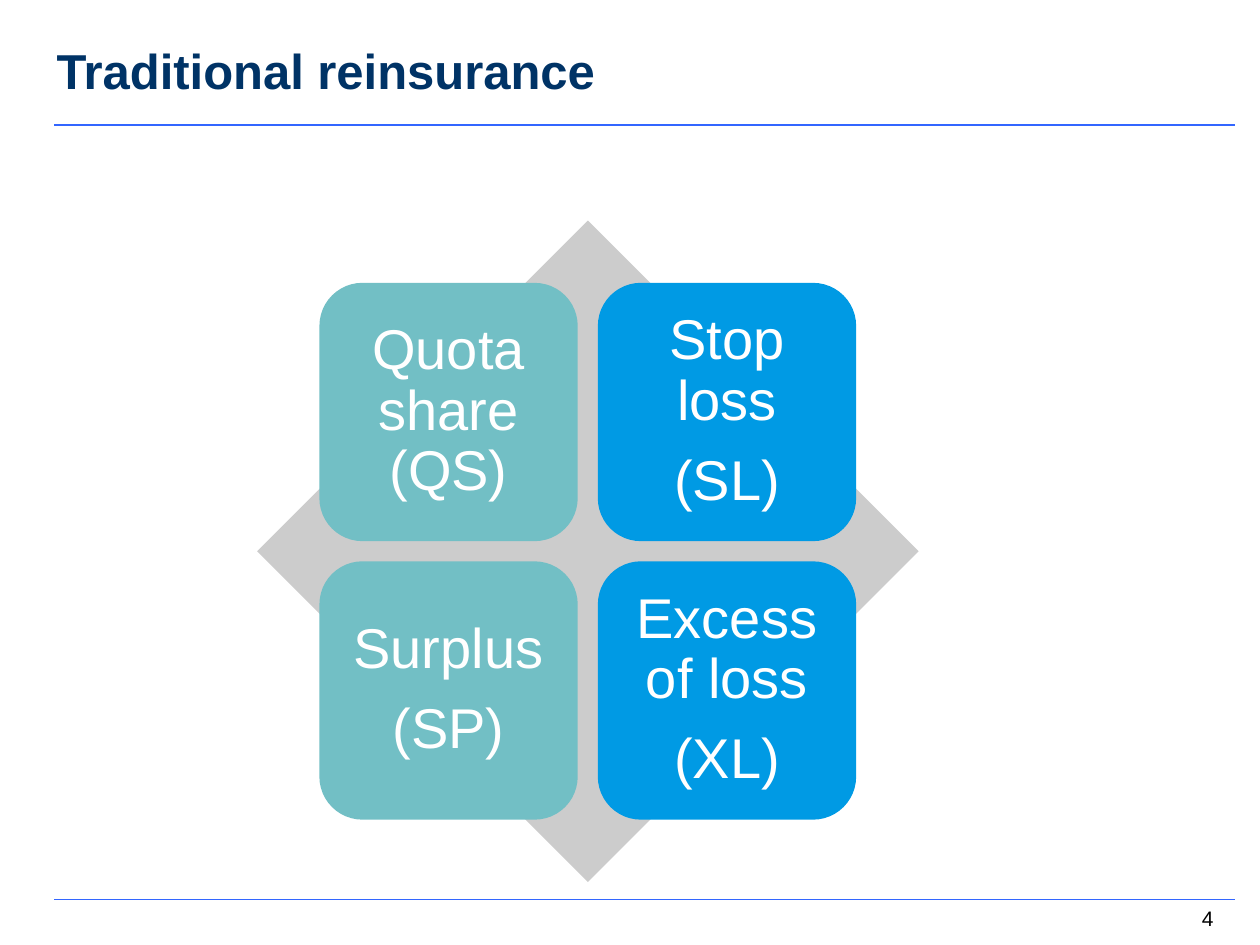
from dataclasses import dataclass

from lxml import etree
from pptx import Presentation
from pptx.dml.color import RGBColor
from pptx.enum import shapes, text
from pptx.oxml import ns
from pptx.util import Inches, Pt

TEAL, BLUE = "72BFC5", "009AE4"
CARD_SIZE, CARD_GAP = 2.05, 0.16
DIAMOND_LEFT, DIAMOND_TOP, DIAMOND_SIZE = 2.04, 1.75, 5.25
CARD_PARAGRAPH = {"line_spacing": 0.9, "space_after": Pt(11.2)}


@dataclass
class Treaty:
    column: int
    row: int
    color: str
    lines: list[str]


@dataclass
class Label:
    left: float
    top: float
    width: float
    height: float
    wording: str
    size: int
    color: str
    bold: bool
    align: text.PP_ALIGN
    anchor: text.MSO_ANCHOR


TREATIES = [
    Treaty(0, 0, TEAL, ["Quota share (QS)"]),
    Treaty(1, 0, BLUE, ["Stop loss", "(SL)"]),
    Treaty(0, 1, TEAL, ["Surplus", "(SP)"]),
    Treaty(1, 1, BLUE, ["Excess of loss", "(XL)"]),
]
LABELS = [
    Label(0.35, 0.13, 7.95, 0.85, "Traditional reinsurance", 28, "003366",
          True, text.PP_ALIGN.LEFT, text.MSO_ANCHOR.MIDDLE),
    Label(9.17, 7.14, 0.83, 0.3, "4", 12, "000000",
          False, text.PP_ALIGN.CENTER, text.MSO_ANCHOR.TOP),
]
RULE_HEIGHTS = [0.99, 7.14]


def rgb(value: str) -> RGBColor:
    return RGBColor.from_string(value)


def apply_format(target, values: dict) -> None:
    for name, value in values.items():
        setattr(target, name, value)


def write_lines(frame, lines: list[str], size: int, color: str, bold: bool, layout: dict) -> None:
    for index, line in enumerate(lines):
        paragraph = frame.paragraphs[0] if index == 0 else frame.add_paragraph()
        apply_format(paragraph, layout)
        run = paragraph.add_run()
        run.text = line
        apply_format(run.font, {"name": "Arial", "size": Pt(size), "bold": bold})
        run.font.color.rgb = rgb(color)


def draw_rule(slide, top: float) -> None:
    rule = slide.shapes.add_connector(
        shapes.MSO_CONNECTOR.STRAIGHT, Inches(0.43), Inches(top), Inches(9.8), Inches(top))
    rule.line.color.rgb = rgb("3366FF")
    rule.line.width = Pt(1)
    etree.SubElement(rule._element.spPr, ns.qn("a:effectLst"))


def draw_label(slide, label: Label) -> None:
    box = slide.shapes.add_textbox(
        Inches(label.left), Inches(label.top), Inches(label.width), Inches(label.height))
    apply_format(box.text_frame, {"word_wrap": True, "vertical_anchor": label.anchor})
    write_lines(box.text_frame, [label.wording], label.size, label.color, label.bold,
                {"alignment": label.align})


def draw_square(slide, kind: shapes.MSO_SHAPE, left: float, top: float, size: float, color: str):
    square = slide.shapes.add_shape(kind, Inches(left), Inches(top), Inches(size), Inches(size))
    square.shadow.inherit = False
    square.fill.solid()
    square.fill.fore_color.rgb = rgb(color)
    square.line.fill.background()
    return square


def draw_treaty(slide, treaty: Treaty) -> None:
    inset = (DIAMOND_SIZE - 2 * CARD_SIZE - CARD_GAP) / 2
    pitch = CARD_SIZE + CARD_GAP
    card = draw_square(slide, shapes.MSO_SHAPE.ROUNDED_RECTANGLE,
                       DIAMOND_LEFT + inset + treaty.column * pitch,
                       DIAMOND_TOP + inset + treaty.row * pitch, CARD_SIZE, treaty.color)
    margins = {f"margin_{side}": Inches(0.13) for side in ("left", "top", "right", "bottom")}
    apply_format(card.text_frame, margins | {
        "word_wrap": True, "vertical_anchor": text.MSO_ANCHOR.MIDDLE})
    write_lines(card.text_frame, treaty.lines, 32, "FFFFFF", False,
                CARD_PARAGRAPH | {"alignment": text.PP_ALIGN.CENTER})


def main() -> None:
    deck = Presentation()
    apply_format(deck, {"slide_width": Inches(10), "slide_height": Inches(7.5)})
    slide = deck.slides.add_slide(deck.slide_layouts[6])
    for top in RULE_HEIGHTS:
        draw_rule(slide, top)
    for label in LABELS:
        draw_label(slide, label)
    draw_square(slide, shapes.MSO_SHAPE.DIAMOND, DIAMOND_LEFT, DIAMOND_TOP, DIAMOND_SIZE, "CCCCCC")
    for treaty in TREATIES:
        draw_treaty(slide, treaty)
    deck.save("out.pptx")


if __name__ == "__main__":
    main()
